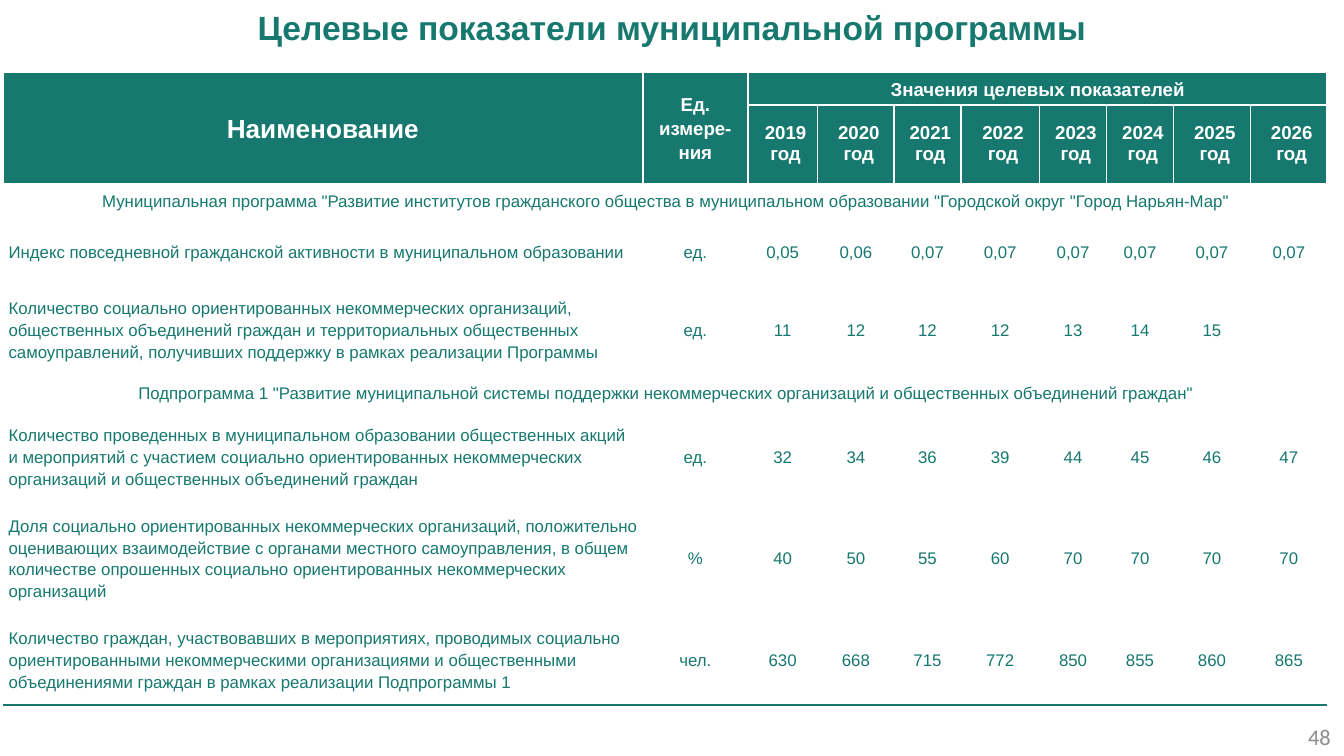
from dataclasses import dataclass

from lxml.etree import SubElement
from pptx import Presentation
from pptx.dml.color import RGBColor
from pptx.enum.text import MSO_ANCHOR, MSO_AUTO_SIZE, PP_ALIGN
from pptx.oxml.ns import qn
from pptx.slide import Slide
from pptx.table import Table, _Cell
from pptx.text.text import TextFrame
from pptx.util import Pt

TEAL = RGBColor(0x16, 0x78, 0x6E)
WHITE = RGBColor(0xFF, 0xFF, 0xFF)
GRAY = RGBColor(0x8C, 0x8C, 0x8C)

COLUMN_WIDTHS = [342.8, 56.2, 37.5, 41, 35.7, 42.2, 35.9, 35.9, 41.2, 41.2]
HEADER_HEIGHTS = [17.7, 41.8]
YEARS = range(2019, 2027)


@dataclass(frozen=True)
class Section:
    """A heading that spans the whole table."""
    title: str
    height: float


@dataclass(frozen=True)
class Indicator:
    """A target indicator with its unit and yearly values."""
    name: str
    unit: str
    values: str
    height: float = 48.8


@dataclass(frozen=True)
class CellStyle:
    """Margins (horizontal, vertical), fill and borders of a cell."""
    margins: tuple[float, float]
    fill: RGBColor | None
    borders: dict[str, RGBColor]


HEADER_BORDERS = {"L": WHITE, "R": WHITE, "T": WHITE}
HEADER = CellStyle((0, 0.7), TEAL, HEADER_BORDERS)
UNIT_HEADER = CellStyle((5.8, 0), TEAL, HEADER_BORDERS)
SPAN_HEADER = CellStyle((0, 0.7), TEAL, {**HEADER_BORDERS, "B": WHITE})
SECTION = CellStyle((3, 3), None, {"B": TEAL})
BODY = CellStyle((3, 5), None, {"B": TEAL})

ROWS = [
    Section('Муниципальная программа "Развитие институтов гражданского общества в муниципальном '
            'образовании "Городской округ "Город Нарьян-Мар"', 18.9),
    Indicator("Индекс повседневной гражданской активности в муниципальном образовании",
              "ед.", "0,05 0,06 0,07 0,07 0,07 0,07 0,07 0,07", 35.2),
    Indicator("Количество социально ориентированных некоммерческих организаций, общественных "
              "объединений граждан и территориальных общественных самоуправлений, получивших "
              "поддержку в рамках реализации Программы", "ед.", "11 12 12 12 13 14 15"),
    Section('Подпрограмма 1 "Развитие муниципальной системы поддержки некоммерческих организаций '
            'и общественных объединений граждан"', 19.2),
    Indicator("Количество проведенных в муниципальном образовании общественных акций и мероприятий "
              "с участием социально ориентированных некоммерческих организаций и общественных "
              "объединений граждан", "ед.", "32 34 36 39 44 45 46 47"),
    Indicator("Доля социально ориентированных некоммерческих организаций, положительно оценивающих "
              "взаимодействие с органами местного самоуправления, в общем количестве опрошенных "
              "социально ориентированных некоммерческих организаций",
              "%", "40 50 55 60 70 70 70 70", 60),
    Indicator("Количество граждан, участвовавших в мероприятиях, проводимых социально "
              "ориентированными некоммерческими организациями и общественными объединениями "
              "граждан в рамках реализации Подпрограммы 1",
              "чел.", "630 668 715 772 850 855 860 865"),
]


def write_text(frame: TextFrame, text: str, *, size: float = 9, font: str = "Arial",
               color: RGBColor = TEAL, bold: bool = False, align: PP_ALIGN = PP_ALIGN.CENTER,
               spacing: float = 1.0, indent: float = 0) -> None:
    """Write one formatted paragraph into a text frame."""
    frame.word_wrap = True
    paragraph = frame.paragraphs[0]
    paragraph.alignment = align
    paragraph.line_spacing = spacing
    if indent:
        paragraph._p.get_or_add_pPr().set("marL", str(Pt(indent)))
    run = paragraph.add_run()
    run.text = text
    run.font.size = Pt(size)
    run.font.name = font
    run.font.bold = bold
    run.font.color.rgb = color


def add_label(slide: Slide, left: float, top: float, width: float, height: float,
              text: str, **text_format) -> TextFrame:
    """Add a text box and return its frame."""
    frame = slide.shapes.add_textbox(Pt(left), Pt(top), Pt(width), Pt(height)).text_frame
    frame.vertical_anchor = MSO_ANCHOR.MIDDLE
    write_text(frame, text, **text_format)
    return frame


def style_cell(cell: _Cell, style: CellStyle) -> None:
    """Apply margins, borders and fill to a cell."""
    horizontal, vertical = style.margins
    cell.margin_left = cell.margin_right = Pt(horizontal)
    cell.margin_top = cell.margin_bottom = Pt(vertical)
    cell.vertical_anchor = MSO_ANCHOR.MIDDLE
    properties = cell._tc.get_or_add_tcPr()
    for side in "LRTB":
        line = SubElement(properties, qn(f"a:ln{side}"), w=str(Pt(1)))
        if side in style.borders:
            solid = SubElement(line, qn("a:solidFill"))
            SubElement(solid, qn("a:srgbClr"), val=str(style.borders[side]))
        else:
            SubElement(line, qn("a:noFill"))
    if style.fill is None:
        cell.fill.background()
    else:
        cell.fill.solid()
        cell.fill.fore_color.rgb = style.fill


def fill_header(table: Table) -> None:
    """Fill the two header rows."""
    for row in range(2):
        for column in range(len(COLUMN_WIDTHS)):
            year_style = SPAN_HEADER if row == 0 else HEADER
            style_cell(table.cell(row, column),
                       HEADER if column == 0 else UNIT_HEADER if column == 1 else year_style)
    table.cell(0, 0).merge(table.cell(1, 0))
    table.cell(0, 1).merge(table.cell(1, 1))
    table.cell(0, 2).merge(table.cell(0, len(COLUMN_WIDTHS) - 1))
    titles = [("Наименование", 14), ("Ед. измере-ния", 10), ("Значения целевых показателей", 10)]
    for column, (title, size) in enumerate(titles):
        write_text(table.cell(0, column).text_frame, title, size=size, color=WHITE,
                   bold=True, spacing=1.15)
    for column, year in enumerate(YEARS, start=2):
        write_text(table.cell(1, column).text_frame, f"{year} год", size=10, color=WHITE,
                   bold=True, indent=3)


def fill_row(table: Table, row: int, content: Section | Indicator) -> None:
    """Fill one section or indicator row."""
    is_section = isinstance(content, Section)
    cells = list(table.rows[row].cells)
    for cell in cells:
        style_cell(cell, SECTION if is_section else BODY)
    if is_section:
        cells[0].merge(cells[-1])
        write_text(cells[0].text_frame, content.title, spacing=1.15)
        return
    texts = [content.name, content.unit, *content.values.split()]
    for column, (cell, text) in enumerate(zip(cells, texts)):
        write_text(cell.text_frame, text, spacing=1.15,
                   align=PP_ALIGN.CENTER if column else PP_ALIGN.LEFT)


def add_indicator_table(slide: Slide, left: float, top: float) -> None:
    """Add the table of target indicators."""
    heights = HEADER_HEIGHTS + [content.height for content in ROWS]
    table = slide.shapes.add_table(len(heights), len(COLUMN_WIDTHS), Pt(left), Pt(top),
                                   Pt(sum(COLUMN_WIDTHS)), Pt(sum(heights))).table
    table.first_row = table.horz_banding = False
    for column, width in zip(table.columns, COLUMN_WIDTHS):
        column.width = Pt(width)
    for row, height in zip(table.rows, heights):
        row.height = Pt(height)
    fill_header(table)
    for row, content in enumerate(ROWS, start=len(HEADER_HEIGHTS)):
        fill_row(table, row, content)


def main() -> None:
    """Build and save the presentation."""
    presentation = Presentation()
    presentation.slide_width, presentation.slide_height = Pt(720), Pt(405)
    slide = presentation.slides.add_slide(presentation.slide_layouts[6])
    add_label(slide, 683.3, 383.8, 36.7, 21.6, "48", size=12, font="Calibri", color=GRAY,
              align=PP_ALIGN.RIGHT)
    title = add_label(slide, 0, 0, 720, 29, "Целевые показатели муниципальной программы",
                      size=18, bold=True)
    title.auto_size = MSO_AUTO_SIZE.SHAPE_TO_FIT_TEXT
    add_indicator_table(slide, 1.6, 38.5)
    presentation.save("out.pptx")


if __name__ == "__main__":
    main()
